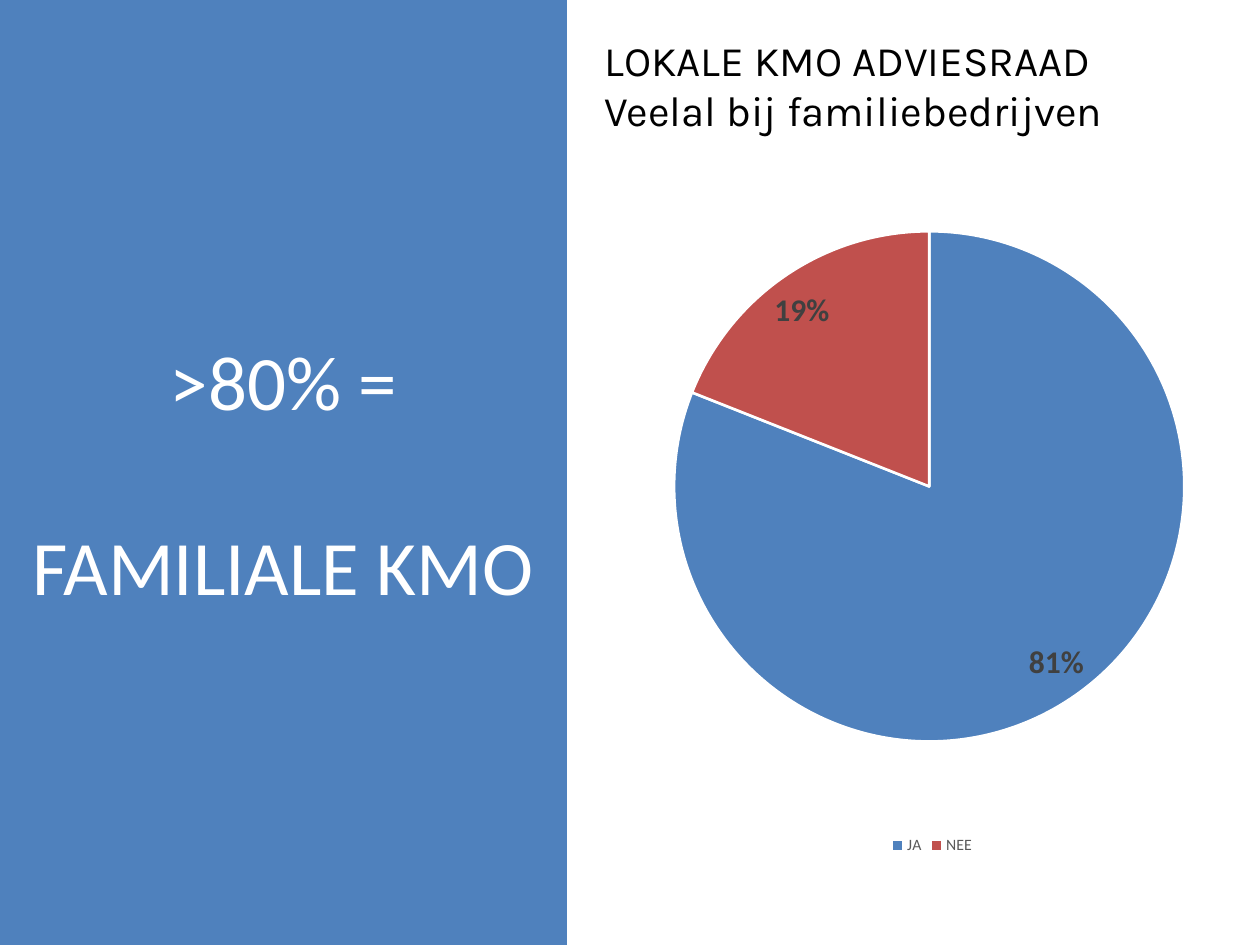
import pptx
import pptx.chart.data
import pptx.dml.color
import pptx.enum.chart
import pptx.enum.shapes
import pptx.enum.text
import pptx.oxml
import pptx.oxml.ns
import pptx.util

WIDE, HIGH = 10, 7.5
HUES = {
    "blue": "4F81BD",
    "red": "C0504D",
    "white": "FFFFFF",
    "black": "000000",
    "dark": "404040",
    "gray": "595959",
}


def hue(name):
    return pptx.dml.color.RGBColor.from_string(HUES[name])


def area(left, top, width, height):
    """Turn shares of the slide's size into lengths."""
    return [pptx.util.Inches(share * side) for share, side in
            zip((left, top, width, height), (WIDE, HIGH, WIDE, HIGH))]


def style(font, face, size, color, bold=False):
    font.name = face
    font.size = pptx.util.Pt(size)
    font.bold = bold
    font.color.rgb = hue(color)


def panel(slide, place, color):
    kind = pptx.enum.shapes.MSO_SHAPE.RECTANGLE
    shape = slide.shapes.add_shape(kind, *area(*place))
    shape.shadow.inherit = False
    shape.fill.solid()
    shape.fill.fore_color.rgb = hue(color)
    shape.line.fill.background()


def text(slide, place, lines, face, size, color, align, anchor, gap=0):
    frame = slide.shapes.add_textbox(*area(*place)).text_frame
    frame.word_wrap = True
    frame.vertical_anchor = anchor
    for index, line in enumerate(lines):
        para = frame.paragraphs[0] if index == 0 else frame.add_paragraph()
        para.alignment = align
        if index:
            para.space_before = pptx.util.Pt(gap)
        run = para.add_run()
        run.text = line
        style(run.font, face, size, color)


def layout(chart, x, y, w, h):
    """Fix the inner plot area, in shares of the chart."""
    plot = chart._chartSpace.chart.plotArea
    for old in plot.findall(pptx.oxml.ns.qn("c:layout")):
        plot.remove(old)
    sizes = "".join(f'<c:{tag} val="{val}"/>' for tag, val in
                    (("x", x), ("y", y), ("w", w), ("h", h)))
    plot.insert(0, pptx.oxml.parse_xml(
        f'<c:layout {pptx.oxml.ns.nsdecls("c")}><c:manualLayout>'
        '<c:layoutTarget val="inner"/><c:xMode val="edge"/>'
        f'<c:yMode val="edge"/>{sizes}</c:manualLayout></c:layout>'))


def pie(slide, place, parts):
    data = pptx.chart.data.CategoryChartData(number_format="0%")
    data.categories = [name for name, share, color in parts]
    data.add_series("Series 1", [share for name, share, color in parts])
    kind = pptx.enum.chart.XL_CHART_TYPE.PIE
    chart = slide.shapes.add_chart(kind, *area(*place), data).chart
    chart.has_title = False
    style(chart.font, "Calibri", 10, "black")
    layout(chart, 0.09, 0.12, 0.81, 0.72)

    # Slices
    plot = chart.plots[0]
    plot.vary_by_categories = True
    for index, (name, share, color) in enumerate(parts):
        form = plot.series[0].points[index].format
        form.fill.solid()
        form.fill.fore_color.rgb = hue(color)
        form.line.color.rgb = hue("white")
        form.line.width = pptx.util.Pt(1.5)

    # Labels
    plot.has_data_labels = True
    labels = plot.data_labels
    labels.show_value = True
    labels.show_percentage = False
    labels.number_format = "0%"
    labels.number_format_is_linked = False
    labels.position = pptx.enum.chart.XL_LABEL_POSITION.BEST_FIT
    style(labels.font, "Calibri", 18, "dark", bold=True)

    # Legend
    chart.has_legend = True
    chart.legend.position = pptx.enum.chart.XL_LEGEND_POSITION.BOTTOM
    chart.legend.include_in_layout = False
    style(chart.legend.font, "Calibri", 9, "gray")


def main():
    deck = pptx.Presentation()
    deck.slide_width = pptx.util.Inches(WIDE)
    deck.slide_height = pptx.util.Inches(HIGH)
    slide = deck.slides.add_slide(deck.slide_layouts[6])
    align = pptx.enum.text.PP_ALIGN
    anchor = pptx.enum.text.MSO_ANCHOR

    # Left side: key message
    panel(slide, (0, 0, 0.45, 1), "blue")
    text(slide, (0.01, 0.09, 0.43, 0.82), [">80% =", "FAMILIALE KMO"],
         "Calibri", 44, "white", align.CENTER, anchor.MIDDLE, gap=53)

    # Right side: chart under its heading
    pie(slide, (0.49, 0.15, 0.5, 0.76),
        [("JA", 0.81, "blue"), ("NEE", 0.19, "red")])
    text(slide, (0.47, 0.03, 0.52, 0.12),
         ["LOKALE KMO ADVIESRAAD", "Veelal bij familiebedrijven"],
         "Karla", 24, "black", align.LEFT, anchor.TOP)

    deck.save("out.pptx")


if __name__ == "__main__":
    main()
